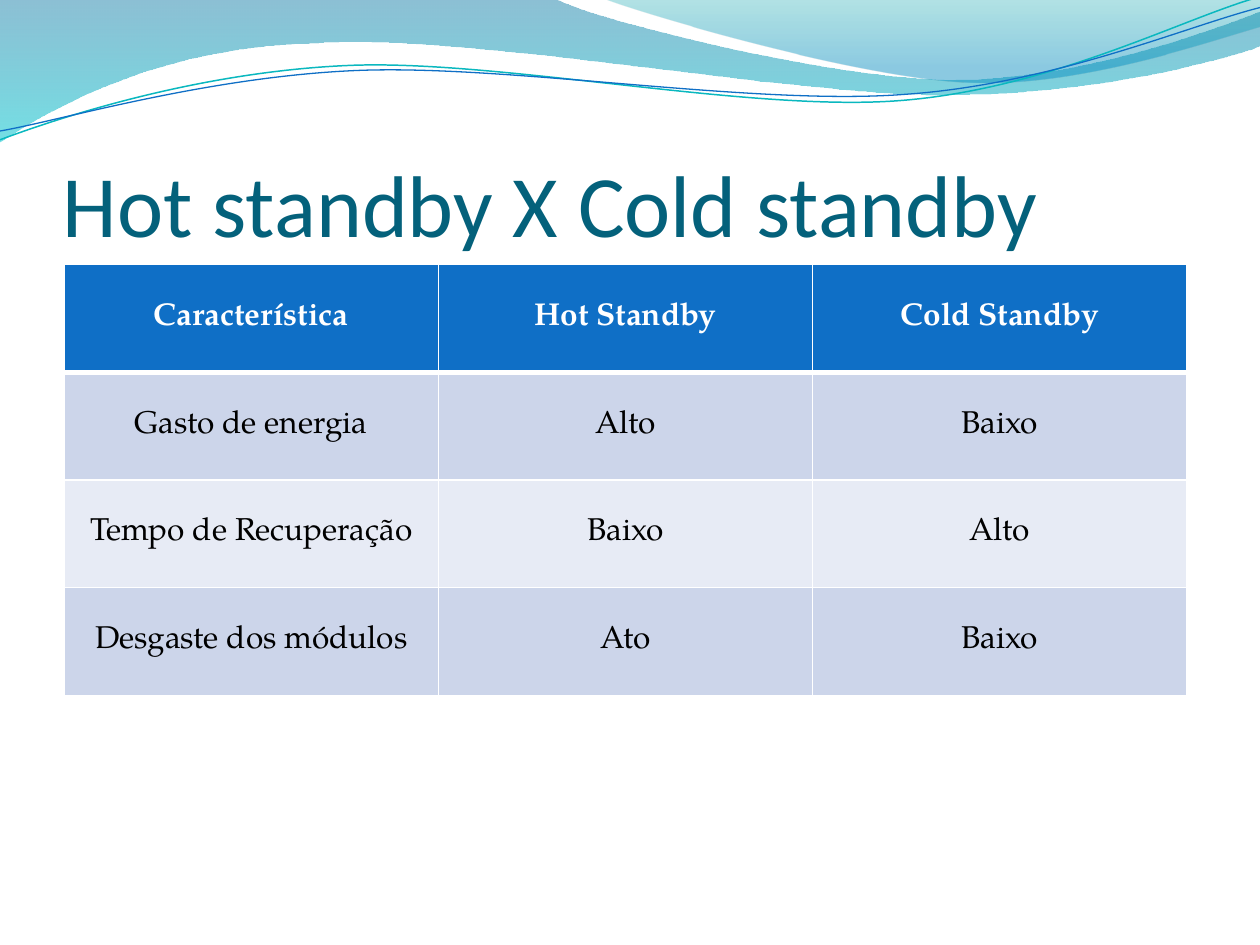
from dataclasses import dataclass

import pptx
import pptx.dml.color
import pptx.enum.text
import pptx.oxml
import pptx.oxml.ns
import pptx.util
from pptx.util import Inches


@dataclass(frozen=True)
class Theme:
    """Colours, fonts and type sizes of the slide."""
    title: str = "04617B"
    header: str = "0F6FC6"
    bands: tuple = ("CCD5EA", "E7EBF5")
    teal: str = "0AB8BF"
    white: str = "FFFFFF"
    black: str = "000000"
    left_wave: tuple = ((0, "0074A1", 45), (100, "00C6CF", 55))
    right_wave: tuple = ((0, "00A1A9", 30), (80, "008BBF", 45))
    title_font: str = "Calibri"
    body_font: str = "TeX Gyre Pagella"
    title_size: int = 50
    body_size: int = 18


THEME = Theme()

LEFT_WAVE = [
    (0, 0), (4.4, -0.01),
    (4.76, 0.17, 6.64, 0.63, 7.58, 0.63), (8.53, 0.63, 9.58, 0.26, 10, 0.09),
    (10.01, 0.36),
    (9.83, 0.44, 8.7, 0.76, 7.46, 0.75), (6.22, 0.75, 3.82, 0.28, 2.57, 0.34),
    (1.29, 0.36, 0.46, 0.83, -0.01, 1.13), (0, 0),
]
RIGHT_WAVE = [
    (4.79, -0.01),
    (5.09, 0.11, 6.82, 0.62, 7.69, 0.65), (8.56, 0.69, 9.61, 0.32, 10, 0.21),
    (10, 0), (4.79, -0.01),
]
TEAL_CURVE = [
    (0, 1.11),
    (0.48, 0.93, 1.58, 0.57, 2.77, 0.52), (3.95, 0.47, 5.93, 0.89, 7.13, 0.8),
    (8.33, 0.71, 9.38, 0.15, 9.98, -0.02),
]
BLUE_CURVE = [
    (0, 1.04),
    (0.47, 0.96, 1.64, 0.61, 2.83, 0.56), (4.03, 0.51, 5.97, 0.84, 7.17, 0.75),
    (8.36, 0.67, 9.41, 0.21, 10, 0.06),
]
ROWS = [
    ("Característica", "Hot Standby", "Cold Standby"),
    ("Gasto de energia", "Alto", "Baixo"),
    ("Tempo de Recuperação", "Baixo", "Alto"),
    ("Desgaste dos módulos", "Ato", "Baixo"),
]


def rgb(code):
    """Turn a hex code into a colour."""
    return pptx.dml.color.RGBColor.from_string(code)


def make_element(tag, attributes="", content=""):
    """Make one drawing element."""
    space = pptx.oxml.ns.nsdecls("a")
    return pptx.oxml.parse_xml(f"<a:{tag} {space} {attributes}>{content}</a:{tag}>")


def add_outline(page, segments, close):
    """Add a freeform whose six-number segments are cubic curves."""
    points = [(Inches(segment[-2]), Inches(segment[-1])) for segment in segments]
    builder = page.shapes.build_freeform(*points[0])
    builder.add_line_segments(points[1:], close=close)
    shape = builder.convert_to_shape()
    shape.shadow.inherit = False
    lines = list(shape._element.iter(pptx.oxml.ns.qn("a:lnTo")))
    for line, segment in zip(lines, segments[1:]):
        if len(segment) == 6:
            marks = "".join(
                f'<a:pt x="{Inches(x) - shape.left}" y="{Inches(y) - shape.top}"/>'
                for x, y in zip(segment[::2], segment[1::2]))
            line.getparent().replace(line, make_element("cubicBezTo", content=marks))
    return shape


def add_wave(page, segments, stops):
    """Add a closed wave with a transparent gradient from top to bottom."""
    shape = add_outline(page, segments, close=True)
    shape.line.fill.background()
    shape.fill.gradient()
    gradient = shape._element.spPr.find(pptx.oxml.ns.qn("a:gradFill"))
    for child in list(gradient):
        gradient.remove(child)
    marks = "".join(
        f'<a:gs pos="{place * 1000}"><a:srgbClr val="{colour}">'
        f'<a:alpha val="{alpha * 1000}"/></a:srgbClr></a:gs>'
        for place, colour, alpha in stops)
    gradient.append(make_element("gsLst", content=marks))
    gradient.append(make_element("lin", 'ang="5400000" scaled="0"'))


def add_curve(page, segments, colour, width):
    """Add an open curved line."""
    shape = add_outline(page, segments, close=False)
    shape.fill.background()
    shape.line.color.rgb = rgb(colour)
    shape.line.width = pptx.util.Pt(width)


def write_text(frame, text, *, font, size, colour, bold=False, align=None):
    """Write one formatted paragraph into a text frame."""
    para = frame.paragraphs[0]
    para.alignment = align
    span = para.add_run()
    span.text = text
    span.font.name = font
    span.font.size = pptx.util.Pt(size)
    span.font.bold = bold
    span.font.color.rgb = rgb(colour)


def add_title(page, text):
    """Add the title, set at the bottom of its box."""
    box = page.shapes.add_textbox(Inches(0.5), Inches(0.77), Inches(9), Inches(1.25))
    frame = box.text_frame
    frame.word_wrap = True
    frame.vertical_anchor = pptx.enum.text.MSO_ANCHOR.BOTTOM
    frame.margin_left = frame.margin_right = frame.margin_bottom = 0
    frame.margin_top = Inches(0.05)
    write_text(frame, text, font=THEME.title_font, size=THEME.title_size,
               colour=THEME.title)


def set_borders(cell, top, bottom):
    """Give a cell white borders with the given top and bottom widths."""
    properties = cell._tc.get_or_add_tcPr()
    paint = f'<a:solidFill><a:srgbClr val="{THEME.white}"/></a:solidFill>'
    widths = {"lnL": 1, "lnR": 1, "lnT": top, "lnB": bottom}
    for index, (side, width) in enumerate(widths.items()):
        properties.insert(
            index, make_element(side, f'w="{pptx.util.Pt(width)}"', paint))


def add_comparison(page, rows):
    """Add the comparison table with a header row and banded body."""
    table = page.shapes.add_table(
        len(rows), len(rows[0]), Inches(0.51), Inches(2.1),
        Inches(8.91), Inches(3.42)).table
    table.horz_banding = False
    for i, row in enumerate(rows):
        header = i == 0
        for j, text in enumerate(row):
            cell = table.cell(i, j)
            cell.vertical_anchor = pptx.enum.text.MSO_ANCHOR.MIDDLE
            cell.fill.solid()
            cell.fill.fore_color.rgb = rgb(
                THEME.header if header else THEME.bands[(i - 1) % 2])
            set_borders(cell, top=3 if i == 1 else 1, bottom=3 if header else 1)
            write_text(cell.text_frame, text, font=THEME.body_font,
                       size=THEME.body_size, bold=header,
                       colour=THEME.white if header else THEME.black,
                       align=pptx.enum.text.PP_ALIGN.CENTER)


def main():
    """Build the slide and save it."""
    deck = pptx.Presentation()
    deck.slide_width, deck.slide_height = Inches(10), Inches(7.5)
    page = deck.slides.add_slide(deck.slide_layouts[6])
    add_wave(page, LEFT_WAVE, THEME.left_wave)
    add_wave(page, RIGHT_WAVE, THEME.right_wave)
    add_curve(page, TEAL_CURVE, THEME.teal, 0.85)
    add_curve(page, BLUE_CURVE, THEME.header, 0.75)
    add_title(page, "Hot standby X Cold standby")
    add_comparison(page, ROWS)
    deck.save("out.pptx")


if __name__ == "__main__":
    main()
